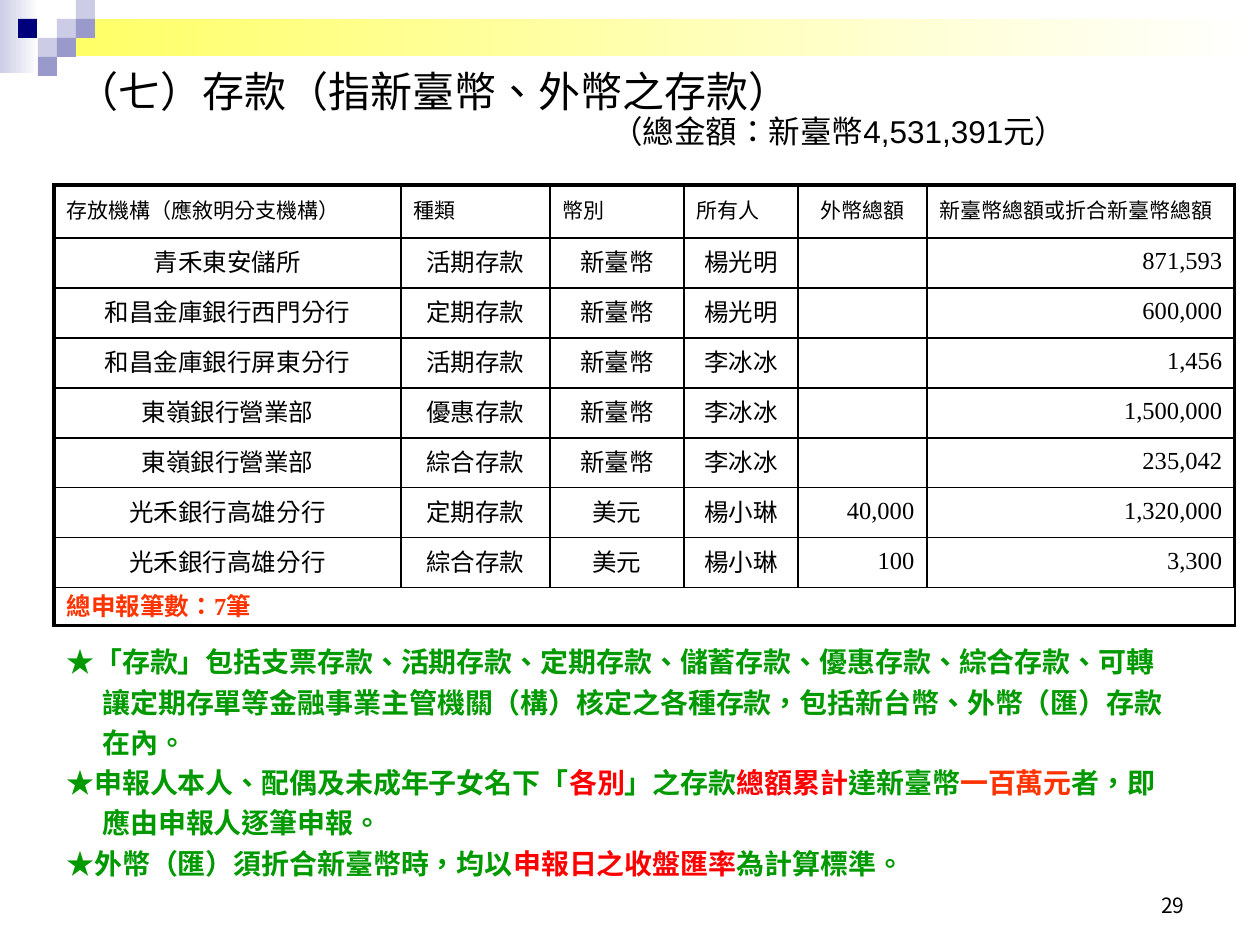
from lxml import etree
from pptx import Presentation
from pptx.dml.color import RGBColor
from pptx.enum.shapes import MSO_SHAPE
from pptx.enum.text import MSO_ANCHOR, PP_ALIGN
from pptx.oxml.ns import qn
from pptx.util import Pt

PX = 914400 / 126
RECT = MSO_SHAPE.RECTANGLE
LEFT, CENTER, RIGHT, JUSTIFY = PP_ALIGN.LEFT, PP_ALIGN.CENTER, PP_ALIGN.RIGHT, PP_ALIGN.JUSTIFY
MIDDLE, BOTTOM = MSO_ANCHOR.MIDDLE, MSO_ANCHOR.BOTTOM
SANS, SERIF, CJK = "Arial", "Times New Roman", "Noto Sans CJK SC"
BLACK, GREEN, RED, ORANGE = "000000", "009900", "FF0000", "FF3300"


def emu(px):
    return round(px * PX)


def write(frame, paragraphs, size=14, font=SANS, color=BLACK, bold=False,
          align=LEFT, spacing=1.0, indent=0, hanging=0):
    """Each paragraph is a list of (text, overrides) runs."""
    frame.word_wrap = True
    for number, runs in enumerate(paragraphs):
        paragraph = frame.add_paragraph() if number else frame.paragraphs[0]
        paragraph.alignment, paragraph.line_spacing = align, spacing
        for text, own in runs:
            run = paragraph.add_run()
            run.text = text
            run.font.name = font
            run.font.size = Pt(own.get("size", size))
            run.font.bold = bold
            run.font.color.rgb = RGBColor.from_string(own.get("color", color))
            props = run.font._element
            props.set("lang", "zh-TW")
            props.find(qn("a:latin")).addnext(
                props.makeelement(qn("a:ea"), {"typeface": CJK}))
            left = own.get("indent", indent)
        layout = paragraph._p.get_or_add_pPr()
        layout.set("marL", str(emu(left)))
        layout.set("indent", str(-emu(hanging)))


deck = Presentation()
deck.slide_width, deck.slide_height = emu(1260), emu(945)
slide = deck.slides.add_slide(deck.slide_layouts[6])

# Corner bands and squares
decorations = [
    (0, 0, 39, 73, ("CCCCE6", "FFFFFF")),
    (57, 19, 1203, 37, ("FFFF66", "FFFFFF")),
]
decorations += [(x, y, 19, 19, (color,)) for x, y, color in [
    (57, 19, "CCCCE6"), (76, 0, "CCCCE6"), (76, 19, "9999CC"), (38, 38, "CCCCE6"),
    (18, 19, "00007D"), (57, 38, "9999CC"), (38, 57, "9999CC")]]
for x, y, width, height, colors in decorations:
    block = slide.shapes.add_shape(RECT, emu(x), emu(y), emu(width), emu(height))
    block.shadow.inherit = False
    block.line.fill.background()
    if len(colors) == 2:
        block.fill.gradient()
        block.fill.gradient_angle = 0
        for stop, position, color in zip(block.fill.gradient_stops, (0, 1), colors):
            stop.position = position
            stop.color.rgb = RGBColor.from_string(color)
    else:
        block.fill.solid()
        block.fill.fore_color.rgb = RGBColor.from_string(colors[0])

# Deposit table
headers = ["存放機構（應敘明分支機構）", "種類", "幣別", "所有人", "外幣總額",
           "新臺幣總額或折合新臺幣總額"]
deposits = [
    ("青禾東安儲所", "活期存款", "新臺幣", "楊光明", "", "871,593"),
    ("和昌金庫銀行西門分行", "定期存款", "新臺幣", "楊光明", "", "600,000"),
    ("和昌金庫銀行屏東分行", "活期存款", "新臺幣", "李冰冰", "", "1,456"),
    ("東嶺銀行營業部", "優惠存款", "新臺幣", "李冰冰", "", "1,500,000"),
    ("東嶺銀行營業部", "綜合存款", "新臺幣", "李冰冰", "", "235,042"),
    ("光禾銀行高雄分行", "定期存款", "美元", "楊小琳", "40,000", "1,320,000"),
    ("光禾銀行高雄分行", "綜合存款", "美元", "楊小琳", "100", "3,300"),
]
total = ["總申報筆數：7筆"] + [""] * 5
rows = [headers, *deposits, total]
column_widths = [347, 149, 134, 114, 129, 308]
row_heights = [53] + [50] * len(deposits) + [38]
last_row, last_column = len(rows) - 1, len(headers) - 1
table = slide.shapes.add_table(len(rows), len(headers), emu(54), emu(185),
                               emu(sum(column_widths)), emu(sum(row_heights))).table
table.first_row = table.horz_banding = False
for column, width in zip(table.columns, column_widths):
    column.width = emu(width)
for row, height in zip(table.rows, row_heights):
    row.height = emu(height)
table.cell(last_row, 0).merge(table.cell(last_row, last_column))

for r, values in enumerate(rows):
    for c, value in enumerate(values):
        cell = table.cell(r, c)
        cell.vertical_anchor = MIDDLE
        cell.margin_top = cell.margin_bottom = 0
        edges = {"lnL": c == 0, "lnR": c == last_column,
                 "lnT": r == 0, "lnB": r == last_row}
        borders = cell._tc.get_or_add_tcPr()
        for tag, outer in edges.items():
            line = etree.SubElement(borders, qn("a:" + tag), w=str(Pt(2 if outer else 1)))
            solid = etree.SubElement(line, qn("a:solidFill"))
            etree.SubElement(solid, qn("a:srgbClr"), val=BLACK)
        cell.fill.background()
        if not value:
            continue
        style = {"font": SERIF, "align": CENTER}
        if r == 0:
            style = {"font": CJK, "size": 12, "align": CENTER if c == 4 else JUSTIFY}
        elif r == last_row:
            style = {"font": SERIF, "color": ORANGE, "bold": True}
        elif c >= 4:
            style["align"] = RIGHT
        hang = 0 if (r, c) == (0, last_column) else 48
        write(cell.text_frame, [[(value, {})]], spacing=0.8, indent=hang, hanging=hang, **style)

# Title, notes and page number
title = [[("（七）存款（指新臺幣、外幣之存款）", {})],
         [("（總金額：新臺幣4,531,391元）", {"size": 18, "indent": 535})]]
notes = [
    [("★「存款」包括支票存款、活期存款、定期存款、儲蓄存款、優惠存款、綜合存款、可轉讓定期存單等"
      "金融事業主管機關（構）核定之各種存款，包括新台幣、外幣（匯）存款在內。", {})],
    [("★申報人本人、配偶及未成年子女名下「", {}), ("各別", {"color": RED}),
     ("」之存款", {}), ("總額累計", {"color": RED}), ("達新臺幣", {}),
     ("一百萬元", {"color": ORANGE}), ("者，即應由申報人逐筆申報。", {})],
    [("★外幣（匯）須折合新臺幣時，均以", {}), ("申報日之收盤匯率", {"color": RED}),
     ("為計算標準。", {})],
]
for x, y, width, height, anchor, paragraphs, style in [
    (64, 66, 1196, 89, MIDDLE, title, {"size": 24, "spacing": 0.9}),
    (54, 631, 1131, 256, MIDDLE, notes,
     {"size": 16, "color": GREEN, "bold": True, "spacing": 1.2, "indent": 36, "hanging": 36}),
    (903, 861, 294, 63, BOTTOM, [[("29", {})]], {"size": 12, "font": CJK, "align": RIGHT}),
]:
    frame = slide.shapes.add_textbox(emu(x), emu(y), emu(width), emu(height)).text_frame
    frame.vertical_anchor = anchor
    write(frame, paragraphs, **style)

deck.save("out.pptx")
